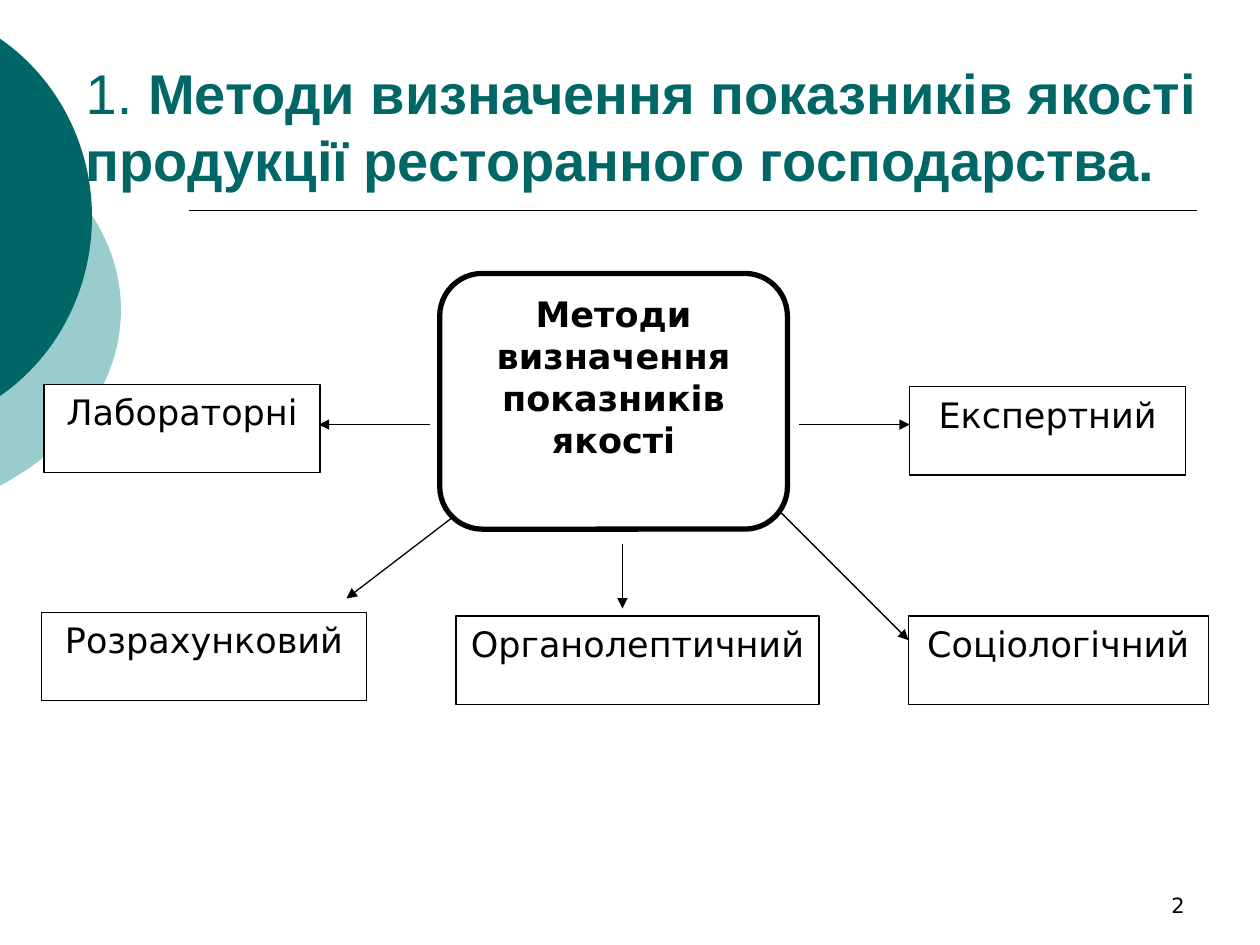
from lxml import etree
from pptx import Presentation
from pptx.dml.color import RGBColor
from pptx.enum import shapes, text
from pptx.oxml.ns import qn
from pptx.util import Inches, Pt

SANS = "DejaVu Sans"
BLACK, WHITE, TEAL, PALE = "000000", "FFFFFF", "006666", "99CCCC"
hue = RGBColor.from_string


def style(par, size, face, tone=BLACK, bold=False):
    font = par.font
    font.size, font.name, font.bold = Pt(size), face, bold
    font.color.rgb = hue(tone)


def link(x1, y1, x2, y2, width, arrow=True):
    line = slide.shapes.add_connector(
        shapes.MSO_CONNECTOR.STRAIGHT, Inches(x1), Inches(y1), Inches(x2), Inches(y2))
    line.line.color.rgb = hue(BLACK)
    line.line.width = Pt(width)
    if arrow:
        etree.SubElement(line.line._get_or_add_ln(), qn("a:tailEnd"), type="triangle")
    etree.SubElement(line._element.spPr, qn("a:effectLst"))


prs = Presentation()
prs.slide_width, prs.slide_height = Inches(10), Inches(7.5)
slide = prs.slides.add_slide(prs.slide_layouts[5])

# Ellipses cut off at the left edge of the slide: frame, fill, then the
# start, two curves and return that outline the part in view
for x, y, w, h, tone, start, *bends in [
    (-3.54, 0.75, 4.5, 3.42, PALE, (-0.01, 1.06),
     [(0.6, 1.38), (0.96, 1.9), (0.96, 2.46)], [(0.96, 3.02), (0.6, 3.54), (-0.01, 3.86)]),
    (-2.65, 0, 3.38, 3.45, TEAL, (-0.01, 0.3),
     [(0.46, 0.62), (0.73, 1.16), (0.73, 1.72)], [(0.73, 2.29), (0.46, 2.83), (-0.01, 3.15)]),
]:
    build = slide.shapes.build_freeform(Inches(x), Inches(y))
    build.add_line_segments([(Inches(x + w), Inches(y)), (Inches(x + w), Inches(y + h))])
    disc = build.convert_to_shape()
    track = next(disc._element.iter(qn("a:path")))
    for child in list(track):
        track.remove(child)
    for tag, dots in [("moveTo", [start])] + [("cubicBezTo", bend) for bend in bends]:
        step = etree.SubElement(track, qn("a:" + tag))
        for px, py in dots:
            etree.SubElement(step, qn("a:pt"), x=str(Inches(px - x)), y=str(Inches(py - y)))
    etree.SubElement(track, qn("a:close"))
    disc.shadow.inherit = False
    disc.fill.solid()
    disc.fill.fore_color.rgb = hue(tone)
    disc.line.fill.background()

# Rule under the title
link(1.5, 1.67, 9.5, 1.67, 1, arrow=False)

# Title, brought in front of the ellipses
title = slide.shapes.title
title.left, title.top, title.width, title.height = map(Inches, (0.58, 0.33, 9.17, 1.25))
slide.shapes._spTree.append(title._element)
frame = title.text_frame
frame.auto_size = text.MSO_AUTO_SIZE.NONE
frame.vertical_anchor = text.MSO_ANCHOR.BOTTOM
par = frame.paragraphs[0]
par.alignment = text.PP_ALIGN.LEFT
style(par, 32, "Arial", TEAL)
par.add_run().text = "1. "
run = par.add_run()
run.text = "Методи визначення показників якості продукції ресторанного господарства."
run.font.bold = True

# Slide number
note = slide.shapes.add_textbox(Inches(7.17), Inches(6.83), Inches(2.33), Inches(0.5))
note.text_frame.word_wrap = True
note.text_frame.vertical_anchor = text.MSO_ANCHOR.BOTTOM
par = note.text_frame.paragraphs[0]
par.text = "2"
par.alignment = text.PP_ALIGN.RIGHT
style(par, 12, SANS)

# Central topic and the five methods
ROUND = shapes.MSO_SHAPE.ROUNDED_RECTANGLE
STEP = shapes.MSO_SHAPE.FLOWCHART_PROCESS
for kind, x, y, w, h, words in [
    (ROUND, 3.49, 2.17, 2.76, 2.03, "Методи визначення показників якості"),
    (STEP, 0.35, 3.05, 2.19, 0.7, "Лабораторні"),
    (STEP, 0.33, 4.86, 2.58, 0.7, "Розрахунковий"),
    (STEP, 7.21, 4.89, 2.38, 0.7, "Соціологічний"),
    (STEP, 3.62, 4.89, 2.88, 0.7, "Органолептичний"),
    (STEP, 7.22, 3.07, 2.19, 0.7, "Експертний"),
]:
    main = kind == ROUND
    box = slide.shapes.add_shape(kind, Inches(x), Inches(y), Inches(w), Inches(h))
    box.shadow.inherit = False
    box.fill.solid()
    box.fill.fore_color.rgb = hue(WHITE)
    box.line.color.rgb = hue(BLACK)
    box.line.width = Pt(3 if main else 0.75)
    box.text_frame.word_wrap = True
    box.text_frame.vertical_anchor = text.MSO_ANCHOR.TOP
    par = box.text_frame.paragraphs[0]
    par.text = words
    par.alignment = text.PP_ALIGN.CENTER
    style(par, 20, SANS, bold=main)

# Arrows from the topic to the methods
for ends in [(3.6, 4.1, 2.75, 4.75), (6.18, 4.05, 7.21, 5.08), (6.34, 3.37, 7.22, 3.37),
             (4.94, 4.32, 4.94, 4.83), (3.41, 3.37, 2.53, 3.37)]:
    link(*ends, 0.75)

prs.save("out.pptx")
